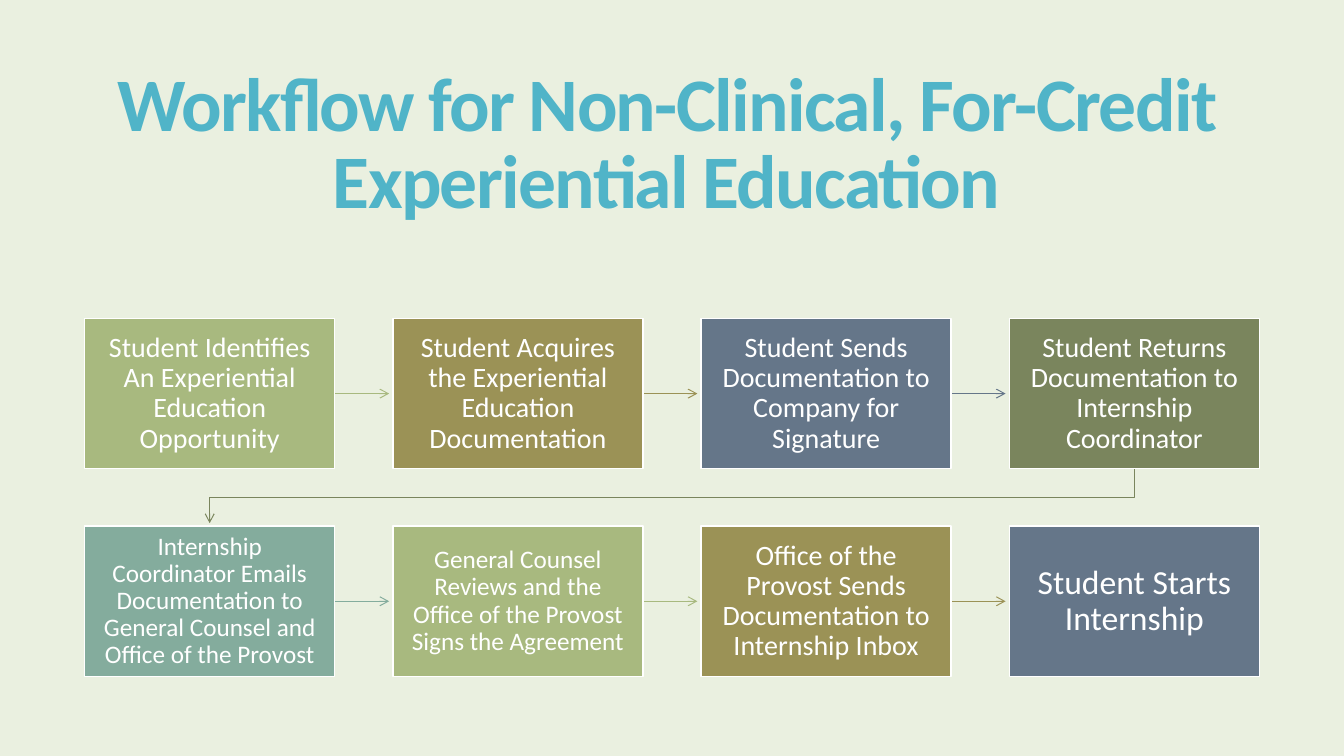
import dataclasses

import lxml.etree
import pptx
import pptx.dml.color
import pptx.enum.shapes
import pptx.enum.text
import pptx.oxml.ns
import pptx.util

Inches = pptx.util.Inches
Pt = pptx.util.Pt

COLORS = {
    "background": "EAF0E0",
    "title": "50B4C8",
    "white": "FFFFFF",
    "sage": "A8B97F",
    "olive": "9B9256",
    "slate": "657689",
    "moss": "7A855D",
    "teal": "84AC9D",
}
FONT = "Calibri"

COLUMNS = 4
LEFT, TOP = 0.84, 3.16
BOX_WIDTH, BOX_HEIGHT = 2.48, 1.49
COLUMN_STEP, ROW_STEP = 3.057, 2.06
ARROW_LENGTH = 0.54
TURN_DROP = 0.29


@dataclasses.dataclass(frozen=True)
class Step:
    text: str
    color: str
    size: int = 20


STEPS = [
    Step("Student Identifies An Experiential Education Opportunity", "sage"),
    Step("Student Acquires the Experiential Education Documentation", "olive"),
    Step("Student Sends Documentation to Company for Signature", "slate"),
    Step("Student Returns Documentation to Internship Coordinator", "moss"),
    Step("Internship Coordinator Emails Documentation to General Counsel "
         "and Office of the Provost", "teal", 18),
    Step("General Counsel Reviews and the Office of the Provost Signs the Agreement",
         "sage", 18),
    Step("Office of the Provost Sends Documentation to Internship Inbox", "olive"),
    Step("Student Starts Internship", "slate", 24),
]


def rgb(name: str) -> pptx.dml.color.RGBColor:
    return pptx.dml.color.RGBColor.from_string(COLORS[name])


def write_text(box, text: str, *, size: float, color: str, bold: bool = False,
               line_spacing: float = 0.9, tracking: float = 0,
               inset_x: float = 0.1, inset_y: float = 0.05) -> None:
    frame = box.text_frame
    frame.word_wrap = True
    frame.vertical_anchor = pptx.enum.text.MSO_ANCHOR.MIDDLE
    frame.margin_left = frame.margin_right = Inches(inset_x)
    frame.margin_top = frame.margin_bottom = Inches(inset_y)
    para = frame.paragraphs[0]
    para.alignment = pptx.enum.text.PP_ALIGN.CENTER
    para.line_spacing = line_spacing
    span = para.add_run()
    span.text = text
    span.font.name = FONT
    span.font.size = Pt(size)
    span.font.bold = bold
    span.font.color.rgb = rgb(color)
    if tracking:
        span.font._element.set("spc", str(round(tracking * 100)))


def corner(index: int) -> tuple[float, float]:
    row, column = divmod(index, COLUMNS)
    return LEFT + column * COLUMN_STEP, TOP + row * ROW_STEP


def draw_step(page, index: int, step: Step) -> None:
    left, top = corner(index)
    box = page.shapes.add_shape(
        pptx.enum.shapes.MSO_SHAPE.RECTANGLE,
        Inches(left), Inches(top), Inches(BOX_WIDTH), Inches(BOX_HEIGHT))
    box.shadow.inherit = False
    box.fill.solid()
    box.fill.fore_color.rgb = rgb(step.color)
    box.line.color.rgb = rgb("white")
    box.line.width = Pt(1)
    write_text(box, step.text, size=step.size, color="white",
               inset_x=0.12, inset_y=0.13)


def style_arrow(arrow, color: str) -> None:
    arrow.line.color.rgb = rgb(color)
    arrow.line.width = Pt(0.75)
    qn = pptx.oxml.ns.qn
    properties = arrow._element.spPr
    line = properties.find(qn("a:ln"))
    lxml.etree.SubElement(line, qn("a:tailEnd"), type="arrow")


def draw_straight_arrow(page, index: int, color: str) -> None:
    left, top = corner(index)
    start, middle = left + BOX_WIDTH, top + BOX_HEIGHT / 2
    arrow = page.shapes.add_connector(
        pptx.enum.shapes.MSO_CONNECTOR.STRAIGHT,
        Inches(start), Inches(middle), Inches(start + ARROW_LENGTH), Inches(middle))
    style_arrow(arrow, color)
    lxml.etree.SubElement(arrow._element.spPr, pptx.oxml.ns.qn("a:effectLst"))


def draw_turning_arrow(page, index: int, color: str) -> None:
    left, top = corner(index)
    start_x, start_y = left + BOX_WIDTH / 2, top + BOX_HEIGHT
    end_x = LEFT + BOX_WIDTH / 2
    turn_y = start_y + TURN_DROP
    route = [(start_x, turn_y), (end_x, turn_y), (end_x, start_y + ARROW_LENGTH)]
    builder = page.shapes.build_freeform(Inches(start_x), Inches(start_y))
    builder.add_line_segments([(Inches(x), Inches(y)) for x, y in route], close=False)
    arrow = builder.convert_to_shape()
    arrow.shadow.inherit = False
    arrow.fill.background()
    style_arrow(arrow, color)


def main() -> None:
    deck = pptx.Presentation()
    deck.slide_width, deck.slide_height = Inches(13.33), Inches(7.5)
    page = deck.slides.add_slide(deck.slide_layouts[6])
    page.background.fill.solid()
    page.background.fill.fore_color.rgb = rgb("background")

    title = page.shapes.add_textbox(Inches(0.72), Inches(0.55), Inches(11.78), Inches(1.81))
    write_text(title, "Workflow for Non-Clinical, For-Credit Experiential Education",
               size=54, color="title", bold=True, line_spacing=0.85, tracking=-1.2)

    for index, step in enumerate(STEPS):
        if index < len(STEPS) - 1:
            ends_row = index % COLUMNS == COLUMNS - 1
            draw_arrow = draw_turning_arrow if ends_row else draw_straight_arrow
            draw_arrow(page, index, step.color)
        draw_step(page, index, step)

    deck.save("out.pptx")


if __name__ == "__main__":
    main()
